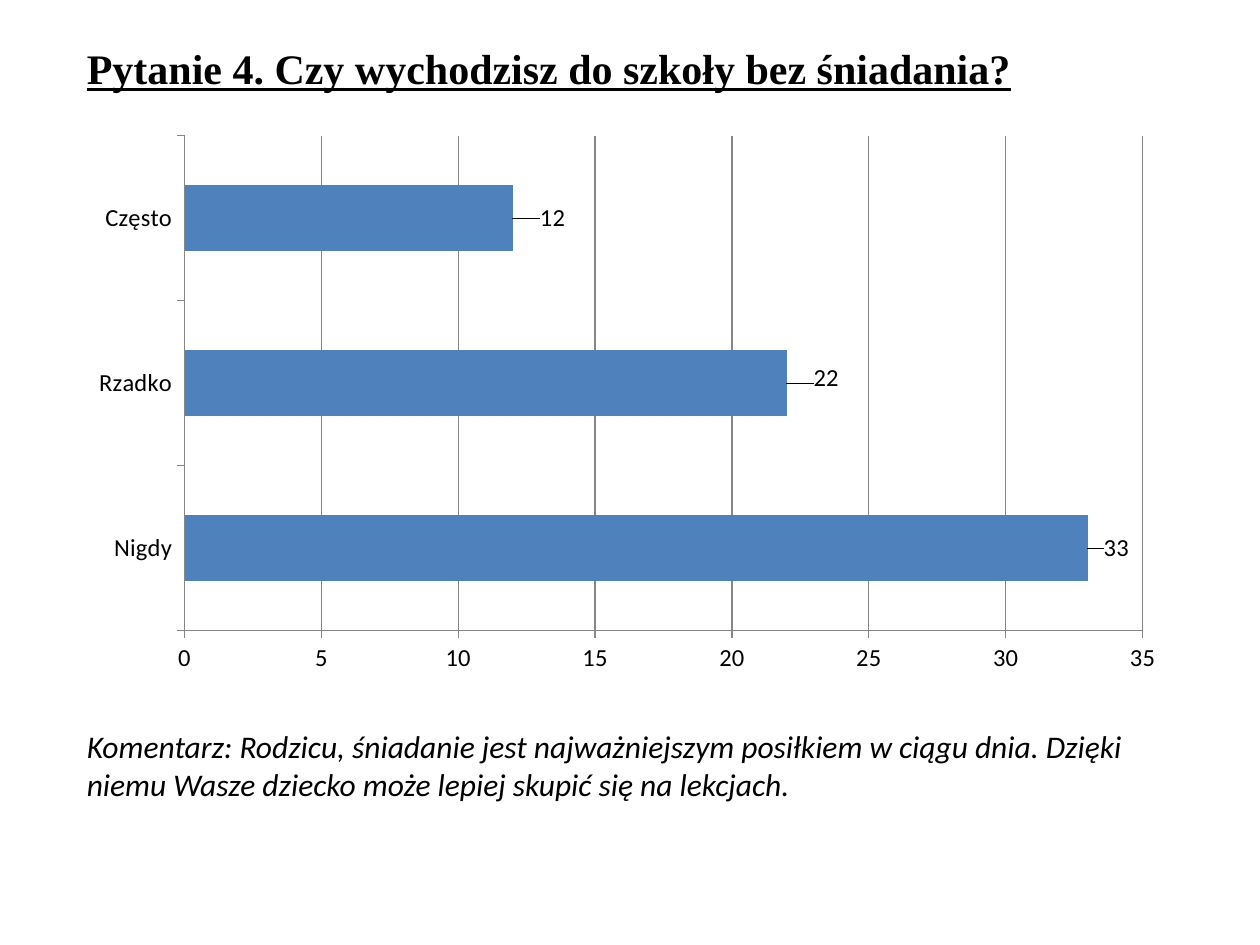
import lxml.etree
import pptx
import pptx.chart.data
import pptx.dml.color
import pptx.enum.chart
import pptx.enum.text
import pptx.oxml.ns
import pptx.util
from dataclasses import dataclass
from pptx.util import Cm

# Content
TITLE = "Pytanie 4. Czy wychodzisz do szkoły bez śniadania?"
COMMENT = (
    "Komentarz: Rodzicu, śniadanie jest najważniejszym posiłkiem w ciągu dnia. "
    "Dzięki niemu Wasze dziecko może lepiej skupić się na lekcjach."
)
# Answer, count, label shift as fractions of the chart size
ANSWERS = [
    ("Nigdy", 33, (0.01, 0)),
    ("Rzadko", 22, (0.02, -0.01)),
    ("Często", 12, (0.02, 0)),
]
PLOT_AREA = {"x": 0.1, "y": 0.02, "w": 0.87, "h": 0.885}


@dataclass(frozen=True)
class Theme:
    text: pptx.dml.color.RGBColor = pptx.dml.color.RGBColor(0, 0, 0)
    bar: pptx.dml.color.RGBColor = pptx.dml.color.RGBColor(0x4F, 0x81, 0xBD)
    line: pptx.dml.color.RGBColor = pptx.dml.color.RGBColor(0x86, 0x86, 0x86)
    title_font: str = "Times New Roman"
    body_font: str = "Calibri"
    title_size: int = 24
    comment_size: int = 18
    chart_size: int = 14


THEME = Theme()
LEFT = Cm(1.5)
TEXT_WIDTH = Cm(22.6)


def add_text(slide, text, top, height, font_name, size):
    box = slide.shapes.add_textbox(LEFT, top, TEXT_WIDTH, height)
    frame = box.text_frame
    frame.word_wrap = True
    frame.auto_size = pptx.enum.text.MSO_AUTO_SIZE.SHAPE_TO_FIT_TEXT
    frame.text = text
    font = frame.paragraphs[0].runs[0].font
    font.name = font_name
    font.size = pptx.util.Pt(size)
    font.color.rgb = THEME.text
    return font


def make_layout(settings):
    """Return a manual chart layout holding the given settings."""
    qualified_name = pptx.oxml.ns.qn
    layout = lxml.etree.Element(qualified_name("c:layout"))
    manual = lxml.etree.SubElement(layout, qualified_name("c:manualLayout"))
    for name, value in settings.items():
        lxml.etree.SubElement(manual, qualified_name(f"c:{name}"), val=str(value))
    return layout


def style_line(line_format):
    line_format.color.rgb = THEME.line
    line_format.width = pptx.util.Pt(0.75)


def add_answer_chart(slide):
    chart_data = pptx.chart.data.CategoryChartData()
    chart_data.categories = [answer for answer, count, shift in ANSWERS]
    chart_data.add_series("Series 1", [count for answer, count, shift in ANSWERS])
    chart = slide.shapes.add_chart(
        pptx.enum.chart.XL_CHART_TYPE.BAR_CLUSTERED,
        LEFT, Cm(2.51), Cm(22.2), Cm(11.28), chart_data,
    ).chart
    chart.has_legend = False
    chart.has_title = False
    chart.font.name = THEME.body_font
    chart.font.size = pptx.util.Pt(THEME.chart_size)
    chart.font.color.rgb = THEME.text

    # Axes and grid
    for axis in (chart.category_axis, chart.value_axis):
        axis.major_tick_mark = pptx.enum.chart.XL_TICK_MARK.OUTSIDE
        axis.minor_tick_mark = pptx.enum.chart.XL_TICK_MARK.NONE
        style_line(axis.format.line)
    value_axis = chart.value_axis
    value_axis.minimum_scale, value_axis.maximum_scale = 0, 35
    value_axis.major_unit = 5
    value_axis.has_major_gridlines = True
    style_line(value_axis.major_gridlines.format.line)

    # Bars and their labels
    plot = chart.plots[0]
    plot.gap_width = 150
    plot.vary_by_categories = False
    series = plot.series[0]
    series.format.fill.solid()
    series.format.fill.fore_color.rgb = THEME.bar
    series.data_labels.show_value = True
    for index, (answer, count, (shift_x, shift_y)) in enumerate(ANSWERS):
        label = series.points[index].data_label
        label.position = pptx.enum.chart.XL_LABEL_POSITION.OUTSIDE_END
    label_elements = series.data_labels._element.findall(pptx.oxml.ns.qn("c:dLbl"))
    for element, (answer, count, (shift_x, shift_y)) in zip(label_elements, ANSWERS):
        element.insert(1, make_layout({"x": shift_x, "y": shift_y}))

    # Plot area
    plot_area = chart._chartSpace.chart.plotArea
    for old_layout in plot_area.findall(pptx.oxml.ns.qn("c:layout")):
        plot_area.remove(old_layout)
    modes = {"layoutTarget": "inner", "xMode": "edge", "yMode": "edge"}
    plot_area.insert(0, make_layout({**modes, **PLOT_AREA}))


def main():
    presentation = pptx.Presentation()
    presentation.slide_width, presentation.slide_height = Cm(25.4), Cm(19.05)
    slide = presentation.slides.add_slide(presentation.slide_layouts[6])

    # Question
    title_font = add_text(
        slide, TITLE, Cm(0.74), Cm(1.27), THEME.title_font, THEME.title_size
    )
    title_font.bold = True
    title_font.underline = True

    add_answer_chart(slide)

    # Comment
    comment_font = add_text(
        slide, COMMENT, Cm(14.53), Cm(1.8), THEME.body_font, THEME.comment_size
    )
    comment_font.italic = True

    presentation.save("out.pptx")


if __name__ == "__main__":
    main()
